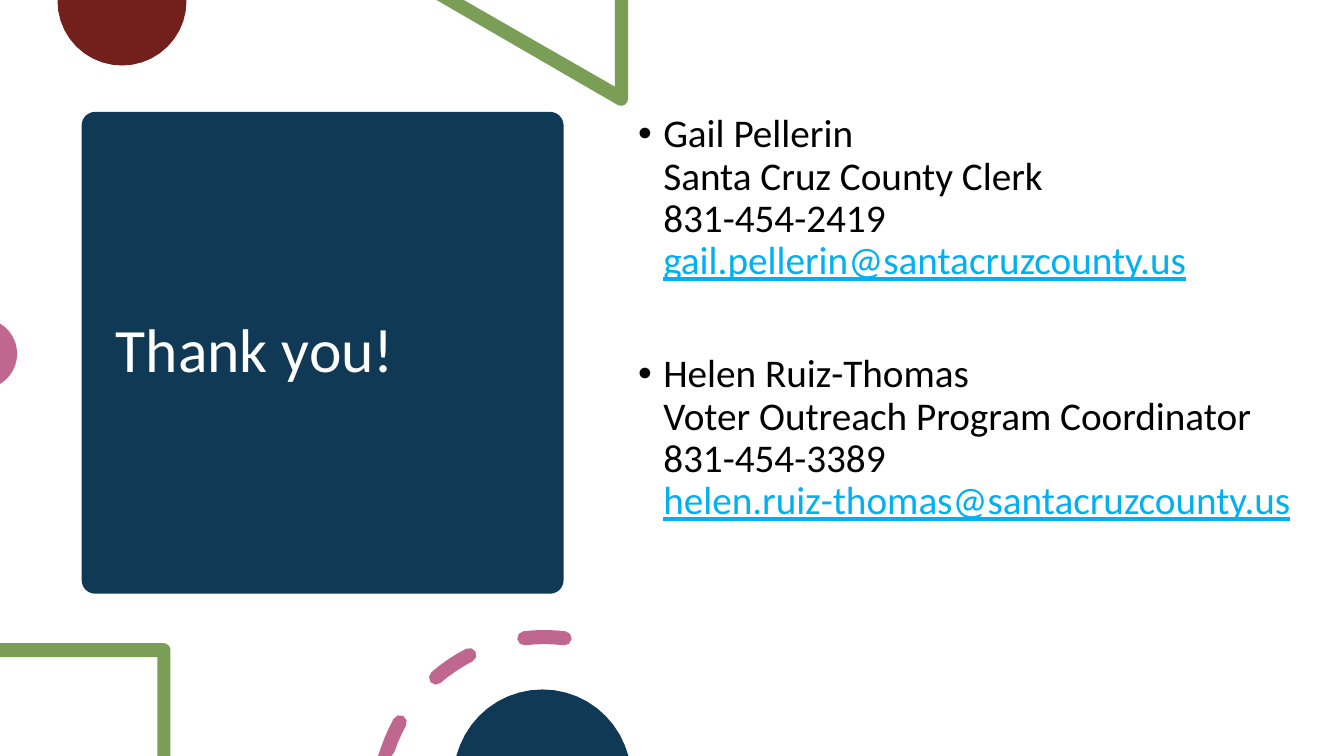
from math import cos, radians, sin

from lxml import etree
from pptx import Presentation
from pptx.dml.color import RGBColor
from pptx.enum.shapes import MSO_SHAPE
from pptx.enum.text import MSO_ANCHOR
from pptx.oxml.ns import qn
from pptx.util import Inches, Pt

ROUND = MSO_SHAPE.ROUNDED_RECTANGLE
MIDDLE, TOP = MSO_ANCHOR.MIDDLE, MSO_ANCHOR.TOP
WIDE, HIGH = 13.33, 7.5
NAVY, GREEN, PINK, RED = "0F3955", "7A9E56", "BF678E", "731F1C"
WHITE, BLACK, SKY = "FFFFFF", "000000", "00B0F0"
STAFF = [
    ("Gail Pellerin", "Santa Cruz County Clerk", "831-454-2419",
     "gail.pellerin@santacruzcounty.us"),
    ("Helen Ruiz-Thomas", "Voter Outreach Program Coordinator", "831-454-3389",
     "helen.ruiz-thomas@santacruzcounty.us"),
]


def color(code):
    """Turn a hex string into a colour."""
    return RGBColor.from_string(code)


def paint(shape, code):
    """Give a shape a flat fill with no line or shadow."""
    shape.shadow.inherit = False
    shape.fill.solid()
    shape.fill.fore_color.rgb = color(code)
    shape.line.fill.background()


def arc(x, y, r, start, end, parts=4):
    """List points on an arc, in degrees clockwise from the top."""
    turns = [radians(start + (end - start) * i / parts) for i in range(parts + 1)]
    return [(x + r * sin(a), y - r * cos(a)) for a in turns]


def draw(slide, code, *rings):
    """Draw closed outlines as one shape, held within the slide height."""
    pen = None
    for ring in rings:
        dots = [(Inches(x), Inches(min(max(y, 0), HIGH))) for x, y in ring]
        if pen is None:
            pen = slide.shapes.build_freeform(*dots[0])
        else:
            pen.move_to(*dots[0])
        pen.add_line_segments(dots[1:], close=True)
    paint(pen.convert_to_shape(), code)


def dash(x, y, r, half, start, end):
    """Outline a curved dash with round ends."""
    first, last = arc(x, y, r, start, end, 1)
    return (arc(x, y, r + half, start, end)
            + arc(*last, half, end, end + 180)
            + arc(x, y, r - half, end, start)
            + arc(*first, half, start + 180, start + 360))


def write(para, text, size=28, code=BLACK, line=False):
    """Add a run of text with its format."""
    run = para.add_run()
    run.text = text
    font = run.font
    font.name, font.size, font.underline = "Calibri", Pt(size), line
    font.color.rgb = color(code)


def frame(slide, x, y, w, h, anchor):
    """Add a wrapping text box and return its frame."""
    box = slide.shapes.add_textbox(*map(Inches, (x, y, w, h)))
    box.text_frame.word_wrap = True
    box.text_frame.vertical_anchor = anchor
    return box.text_frame


def bullet(para):
    """Give a paragraph a hanging bullet."""
    props = para._p.get_or_add_pPr()
    props.set("marL", str(Inches(0.25)))
    props.set("indent", str(-Inches(0.25)))
    etree.SubElement(props, qn("a:buFont")).set("typeface", "Arial")
    etree.SubElement(props, qn("a:buChar")).set("char", "•")


def title(slide, x, y, side):
    """Place the navy panel and its title."""
    panel = slide.shapes.add_shape(ROUND, *map(Inches, (x, y, side, side)))
    panel.adjustments[0] = 0.028
    paint(panel, NAVY)
    text = frame(slide, x + 0.24, y + 0.11, side - 0.47, side - 0.22, MIDDLE)
    para = text.paragraphs[0]
    para.line_spacing = 0.9
    write(para, "Thank you!", size=44, code=WHITE)


def people(slide, x, y, w, h):
    """List each contact as one bullet with its lines."""
    text = frame(slide, x, y, w, h, TOP)
    for i, (*lines, mail) in enumerate(STAFF):
        para = text.add_paragraph() if i else text.paragraphs[0]
        bullet(para)
        para.line_spacing = 0.9
        para.space_before = Pt(50.5 if i else 0)
        for line in lines:
            write(para, line)
            para.add_line_break()
        write(para, mail, code=SKY, line=True)


def decor(slide):
    """Scatter the coloured figures along the slide edges."""
    draw(slide, RED, [(0.58, 0), (1.84, 0)] + arc(1.21, 0.01, 0.64, 90, 270, 20))
    draw(slide, GREEN, [(4.33, 0), (4.6, 0), (6.1, 0.86), (6.1, 0), (6.23, 0)]
         + arc(6.16, 0.98, 0.07, 90, 205))
    draw(slide, PINK, arc(-0.18, 3.51, 0.35, 31, 149, 12))
    draw(slide, GREEN, [(1.69, HIGH), (1.56, HIGH), (1.56, 6.52), (0, 6.52), (0, 6.38)]
         + arc(1.62, 6.45, 0.07, 0, 90))
    draw(slide, PINK, *(dash(5.4, 7.96, 1.64, 0.07, a, b)
                        for a, b in ((-75, -61), (-41, -27), (-7, 7))))
    draw(slide, NAVY, arc(5.38, 7.72, 0.88, -76, 76, 20))


def main():
    """Build and save the slide."""
    deck = Presentation()
    deck.slide_width, deck.slide_height = Inches(WIDE), Inches(HIGH)
    slide = deck.slides.add_slide(deck.slide_layouts[6])
    title(slide, 0.81, 1.11, 4.78)
    decor(slide)
    people(slide, 6.23, 1.08, 6.68, 5.35)
    deck.save("out.pptx")


if __name__ == "__main__":
    main()
